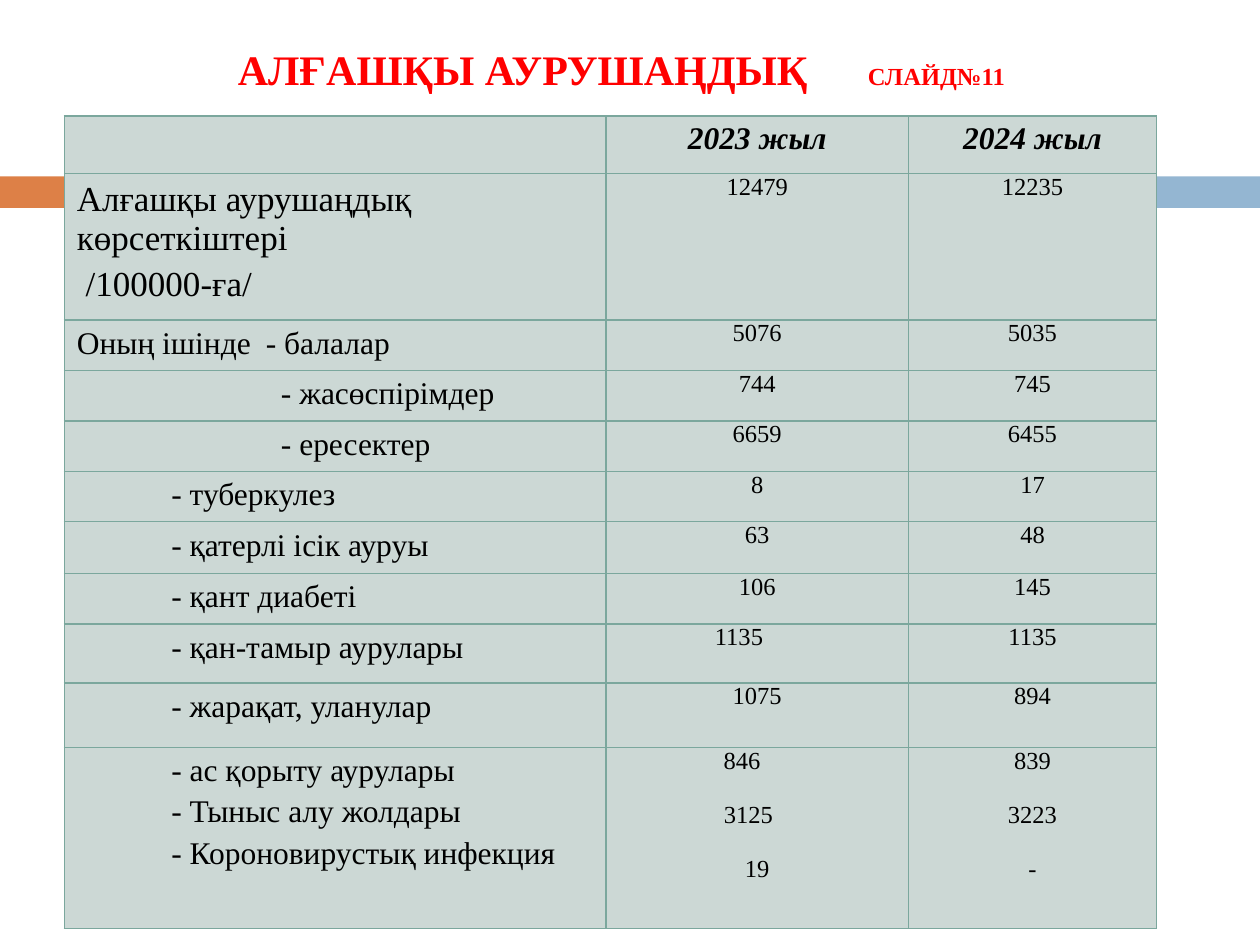
from dataclasses import dataclass

from lxml import etree
from pptx import Presentation
from pptx import util as u
from pptx.dml.color import RGBColor
from pptx.enum import shapes, text
from pptx.oxml.ns import qn

COLORS = {"orange": "DD8047", "blue": "94B6D2", "red": "FF0000",
          "black": "000000", "cell": "CCD8D5", "border": "7BA79D"}
FONT = "Times New Roman"
CENTER, LEFT = text.PP_ALIGN.CENTER, text.PP_ALIGN.LEFT
GROUP, DISEASE = 1.62, 0.75  # indents of the two list levels, inches
HEAD = {"size": u.Pt(18), "bold": True, "italic": True}
LABEL = {"size": u.Pt(18), "bold": False}
LEAD = {"size": u.Pt(20), "bold": False}
VALUE = {"size": u.Pt(14), "bold": False}


@dataclass
class Line:
    words: str
    indent: float = 0
    tab: float = 0


@dataclass
class Row:
    height: float
    labels: list[Line]
    y2023: list[Line]
    y2024: list[Line]
    shift: float = 0  # extra right margin of the 2023 cell
    fmt: dict = None


def row(height: float, label: str, indent: float, y2023: str, y2024: str,
        shift: float = 0) -> Row:
    return Row(height, [Line(label, indent)], [Line(y2023)], [Line(y2024)], shift)


ROWS = [
    Row(1.16, [Line("Алғашқы аурушаңдық көрсеткіштері"), Line("/100000-ға/", 0.07)],
        [Line("12479")], [Line("12235")], fmt=LEAD),
    Row(0.4, [Line("Оның ішінде\t- балалар", tab=GROUP)], [Line("5076")], [Line("5035")]),
    row(0.4, "- жасөспірімдер", GROUP, "744", "745"),
    row(0.4, "- ересектер", GROUP, "6659", "6455"),
    row(0.4, "- туберкулез", DISEASE, "8", "17"),
    row(0.41, "- қатерлі ісік ауруы", DISEASE, "63", "48"),
    row(0.4, "- қант диабеті", DISEASE, "106", "145"),
    row(0.47, "- қан-тамыр аурулары", DISEASE, "1135", "1135", 0.29),
    row(0.51, "- жарақат, уланулар", DISEASE, "1075", "894"),
    Row(1.44, [Line(t, DISEASE) for t in ("- ас қорыту аурулары", "- Тыныс алу жолдары",
                                          "- Короновирустық инфекция")],
        [Line("846"), Line("3125", 0.1), Line("19", 0.24)],
        [Line("839"), Line("3223"), Line("-")], 0.24),
]


def rgb(name: str) -> RGBColor:
    return RGBColor.from_string(COLORS[name])


def add_run(p, words: str, fmt: dict, color: str = "black") -> None:
    r = p.add_run()
    r.text = words
    for key, value in {"name": FONT, **fmt}.items():
        setattr(r.font, key, value)
    r.font.color.rgb = rgb(color)


def set_indent(p, indent: float, tab: float) -> None:
    pPr = p._p.get_or_add_pPr()
    pPr.set("marL", str(u.Inches(indent)))
    pPr.set("indent", "0")
    if tab:
        tabs = etree.SubElement(pPr, qn("a:tabLst"))
        etree.SubElement(tabs, qn("a:tab"), pos=str(u.Inches(tab)), algn="l")


def add_band(s, left: float, width: float, color: str) -> None:
    sp = s.shapes.add_shape(shapes.MSO_SHAPE.RECTANGLE, u.Inches(left), u.Inches(1.4),
                            u.Inches(width), u.Inches(0.25))
    sp.shadow.inherit = False
    sp.fill.solid()
    sp.fill.fore_color.rgb = rgb(color)
    sp.line.fill.background()


def style_cell(cell) -> None:
    cell.fill.solid()
    cell.fill.fore_color.rgb = rgb("cell")
    tcPr = cell._tc.get_or_add_tcPr()
    for i, side in enumerate(("lnL", "lnR", "lnT", "lnB")):
        ln = etree.Element(qn(f"a:{side}"), w=str(u.Pt(0.79)))
        fill = etree.SubElement(ln, qn("a:solidFill"))
        etree.SubElement(fill, qn("a:srgbClr"), val=COLORS["border"])
        tcPr.insert(i, ln)


def fill_cell(cell, lines: list[Line], fmt: dict, align, first: float = 0,
              gap: float = 0, spacing: float = 1.0) -> None:
    tf = cell.text_frame
    for i, line in enumerate(lines):
        p = tf.add_paragraph() if i else tf.paragraphs[0]
        p.alignment = align
        p.line_spacing = spacing
        p.space_before = u.Pt(gap if i else first)
        set_indent(p, line.indent, line.tab)
        add_run(p, line.words, fmt)


def fill_number(cell, lines: list[Line], fmt: dict, shift: float = 0, **spacing) -> None:
    margins = {"margin_left": 0.07, "margin_right": 0.07 + shift,
               "margin_top": 0, "margin_bottom": 0}
    for key, value in margins.items():
        setattr(cell, key, u.Inches(value))
    fill_cell(cell, lines, fmt, CENTER, **spacing)


def add_title(s) -> None:
    tf = s.shapes.add_textbox(u.Inches(0.03), u.Inches(0.3),
                              u.Inches(11.17), u.Inches(0.5)).text_frame
    tf.word_wrap = True
    p = tf.paragraphs[0]
    p.alignment = LEFT
    set_indent(p, 1.76, 8.12)
    add_run(p, "АЛҒАШҚЫ АУРУШАҢДЫҚ\t", {"size": u.Pt(24), "bold": True}, "red")
    add_run(p, "СЛАЙД№11", {"size": u.Pt(14), "bold": True}, "red")


def add_morbidity_table(s) -> None:
    widths, heights = [4.3, 2.4, 1.97], [0.46] + [item.height for item in ROWS]
    table = s.shapes.add_table(len(heights), len(widths), u.Inches(0.51), u.Inches(0.92),
                               u.Inches(sum(widths)), u.Inches(sum(heights))).table
    table.first_row = table.horz_banding = False
    for col, width in zip(table.columns, widths):
        col.width = u.Inches(width)
    for table_row, height in zip(table.rows, heights):
        table_row.height = u.Inches(height)
    for cell in table.iter_cells():
        style_cell(cell)

    # Header
    for col, year in enumerate(("2023 жыл", "2024 жыл"), 1):
        fill_number(table.cell(0, col), [Line(year)], HEAD, spacing=1.15)

    # Body
    for i, item in enumerate(ROWS, 1):
        fmt = item.fmt or LABEL
        before = fmt["size"].pt * 0.2
        fill_cell(table.cell(i, 0), item.labels, fmt, LEFT, before, before)
        fill_number(table.cell(i, 1), item.y2023, VALUE, item.shift, gap=15.5)
        fill_number(table.cell(i, 2), item.y2024, VALUE, gap=15.5)


def main() -> None:
    prs = Presentation()
    prs.slide_width, prs.slide_height = u.Inches(10), u.Inches(7.5)
    s = prs.slides.add_slide(prs.slide_layouts[6])
    # Background bands
    add_band(s, 0, 0.58, "orange")
    add_band(s, 0.65, 9.35, "blue")
    add_title(s)
    add_morbidity_table(s)
    prs.save("out.pptx")


if __name__ == "__main__":
    main()
